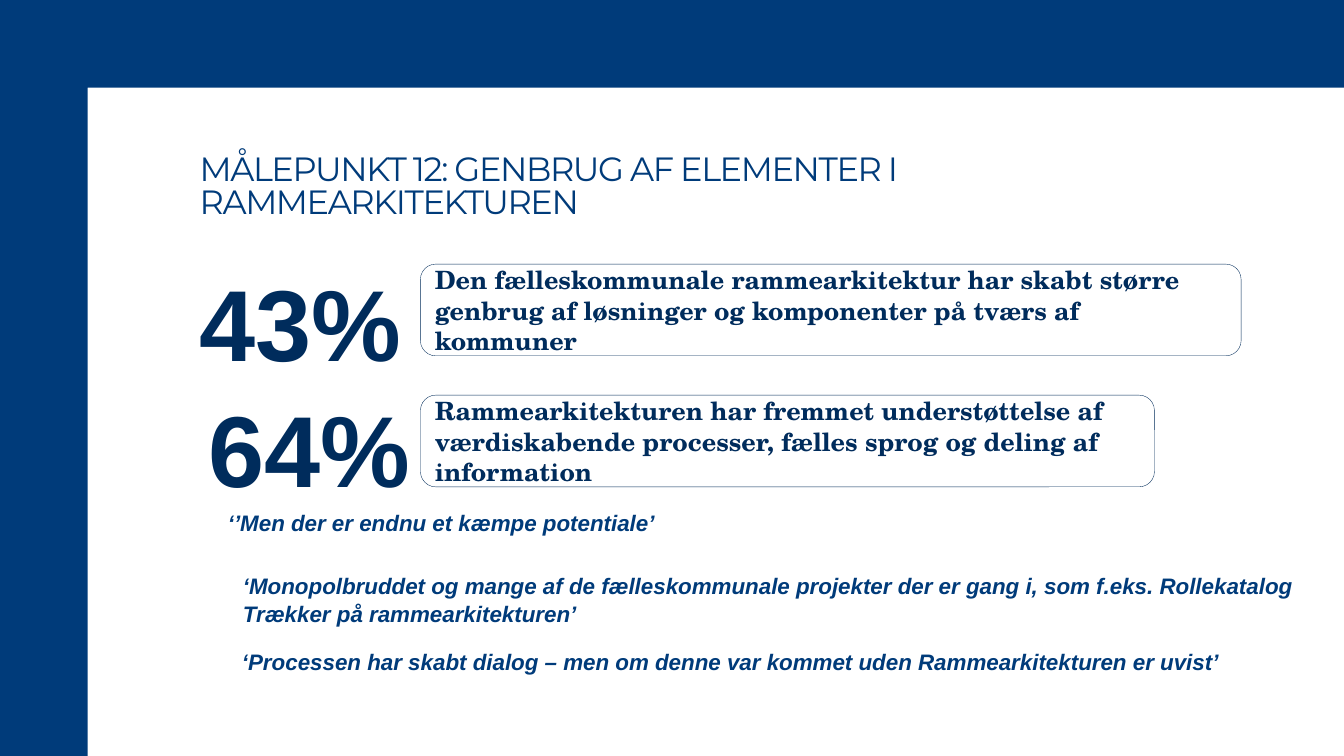
"""Build the slide on reuse of elements in the shared architecture."""
from dataclasses import dataclass

import pptx
import pptx.dml.color
import pptx.enum.shapes
import pptx.enum.text
import pptx.shapes.base
import pptx.slide
import pptx.text.text
import pptx.util

Inches = pptx.util.Inches
Anchor = pptx.enum.text.MSO_ANCHOR
Align = pptx.enum.text.PP_ALIGN


@dataclass(frozen=True)
class Style:
    face: str
    size: int
    color: str
    bold: bool = False
    slant: bool = False
    space: float = 1.0


@dataclass(frozen=True)
class Theme:
    blue: str = "003B7A"
    edge: str = "002C5A"
    title: Style = Style("Montserrat", 24, "003B7A", space=0.8)
    claim: Style = Style("TeX Gyre Schola", 18, "002C5C", bold=True)
    share: Style = Style("Arial", 72, "002C5C", bold=True, space=1.04)
    quote: Style = Style("Arial", 16, "003B7A", bold=True, slant=True, space=1.04)


@dataclass(frozen=True)
class Box:
    left: float
    top: float
    width: float
    height: float

    def place(self) -> tuple[int, ...]:
        return tuple(Inches(n) for n in (self.left, self.top, self.width, self.height))


@dataclass(frozen=True)
class Result:
    share: str
    claim: str
    label: Box
    panel: Box


@dataclass(frozen=True)
class Quote:
    lines: tuple[str, ...]
    box: Box


THEME = Theme()
WIDTH, HEIGHT, BAND = 13.33, 7.5, 0.87
TITLE = "MÅLEPUNKT 12: GENBRUG AF ELEMENTER I RAMMEARKITEKTUREN"
RESULTS = (
    Result(
        "43%",
        "Den fælleskommunale rammearkitektur har skabt større genbrug af "
        "løsninger og komponenter på tværs af kommuner",
        Box(1.98, 2.54, 2.02, 1.26),
        Box(4.17, 2.62, 8.14, 0.91),
    ),
    Result(
        "64%",
        "Rammearkitekturen har fremmet understøttelse af værdiskabende "
        "processer, fælles sprog og deling af information",
        Box(2.07, 3.79, 2.02, 1.26),
        Box(4.17, 3.92, 7.28, 0.91),
    ),
)
QUOTES = (
    Quote(("‘’Men der er endnu et kæmpe potentiale’",), Box(2.26, 5.04, 4.28, 0.28)),
    Quote(
        (
            "‘Monopolbruddet og mange af de fælleskommunale projekter der er gang i, "
            "som f.eks. Rollekatalog",
            "Trækker på rammearkitekturen’",
        ),
        Box(2.41, 5.67, 10.56, 0.56),
    ),
    Quote(
        ("‘Processen har skabt dialog – men om denne var kommet uden "
         "Rammearkitekturen er uvist’",),
        Box(2.4, 6.42, 9.74, 0.28),
    ),
)


def paint(code: str) -> pptx.dml.color.RGBColor:
    return pptx.dml.color.RGBColor.from_string(code)


def write(frame: pptx.text.text.TextFrame, lines: tuple[str, ...], style: Style) -> None:
    frame.text = "\n".join(lines)
    for line in frame.paragraphs:
        line.alignment = Align.LEFT
        line.line_spacing = style.space
        font = line.font
        font.name = style.face
        font.size = pptx.util.Pt(style.size)
        font.color.rgb = paint(style.color)
        font.bold, font.italic = style.bold, style.slant


def trim(frame: pptx.text.text.TextFrame) -> None:
    frame.margin_left = frame.margin_right = 0
    frame.margin_top = frame.margin_bottom = 0


def draw_frame(slide: pptx.slide.Slide) -> None:
    pen = slide.shapes.build_freeform(Inches(WIDTH), Inches(BAND))
    points = ((WIDTH, 0), (0, 0), (0, HEIGHT), (BAND, HEIGHT), (BAND, BAND))
    pen.add_line_segments([(Inches(x), Inches(y)) for x, y in points], close=True)
    frame = pen.convert_to_shape()
    frame.shadow.inherit = False
    frame.fill.solid()
    frame.fill.fore_color.rgb = paint(THEME.blue)
    frame.line.fill.background()


def draw_title(slide: pptx.slide.Slide) -> None:
    title = slide.shapes.title
    title.left, title.top, title.width, title.height = Box(1.98, 1.27, 8.94, 0.92).place()
    frame = title.text_frame
    write(frame, (TITLE,), THEME.title)
    trim(frame)
    frame.word_wrap = True
    frame.auto_size = pptx.enum.text.MSO_AUTO_SIZE.NONE
    frame.vertical_anchor = Anchor.BOTTOM
    frame.paragraphs[0].runs[0]._r.get_or_add_rPr().set("spc", "-100")


def draw_text(slide: pptx.slide.Slide, box: Box, lines: tuple[str, ...], style: Style) -> None:
    frame = slide.shapes.add_textbox(*box.place()).text_frame
    write(frame, lines, style)
    trim(frame)
    frame.word_wrap = False
    frame.auto_size = pptx.enum.text.MSO_AUTO_SIZE.SHAPE_TO_FIT_TEXT


def draw_result(slide: pptx.slide.Slide, result: Result) -> None:
    kind = pptx.enum.shapes.MSO_SHAPE.ROUNDED_RECTANGLE
    panel = slide.shapes.add_shape(kind, *result.panel.place())
    panel.shadow.inherit = False
    panel.fill.background()
    panel.line.color.rgb = paint(THEME.edge)
    panel.line.width = pptx.util.Pt(0.25)
    panel.text_frame.word_wrap = True
    panel.text_frame.vertical_anchor = Anchor.MIDDLE
    write(panel.text_frame, (result.claim,), THEME.claim)
    draw_text(slide, result.label, (result.share,), THEME.share)


def main() -> None:
    deck = pptx.Presentation()
    deck.slide_width, deck.slide_height = Inches(WIDTH), Inches(HEIGHT)
    slide = deck.slides.add_slide(deck.slide_layouts.get_by_name("Title Only"))
    draw_frame(slide)
    draw_title(slide)
    for result in RESULTS:
        draw_result(slide, result)
    for quote in QUOTES:
        draw_text(slide, quote.box, quote.lines, THEME.quote)
    deck.save("out.pptx")


if __name__ == "__main__":
    main()
